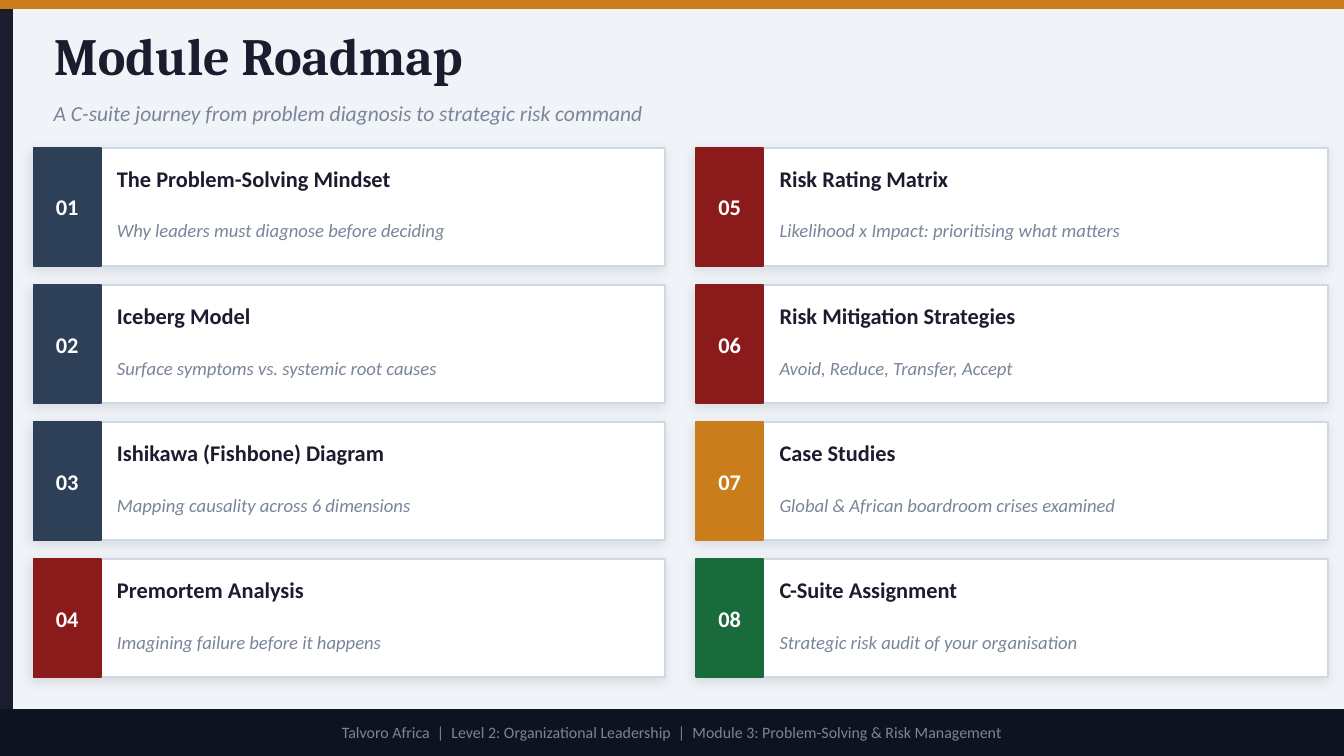
"""Build the module roadmap slide with its eight numbered cards."""
from pptx import Presentation
from pptx.dml.color import RGBColor
from pptx.enum.shapes import MSO_SHAPE
from pptx.enum.text import MSO_ANCHOR, MSO_AUTO_SIZE, PP_ALIGN
from pptx.oxml import parse_xml
from pptx.oxml.ns import nsdecls
from pptx.util import Inches, Pt

COLORS = {
    "background": "F0F4F8",
    "ink": "1C1C2E",
    "muted": "7A8599",
    "white": "FFFFFF",
    "border": "D0D8E4",
    "footer": "0D1321",
    "blue": "2E4057",
    "red": "8B1A1A",
    "amber": "C97D1B",
    "green": "1A6B3C",
}
MODULES = [
    ("The Problem-Solving Mindset", "Why leaders must diagnose before deciding", "blue"),
    ("Iceberg Model", "Surface symptoms vs. systemic root causes", "blue"),
    ("Ishikawa (Fishbone) Diagram", "Mapping causality across 6 dimensions", "blue"),
    ("Premortem Analysis", "Imagining failure before it happens", "red"),
    ("Risk Rating Matrix", "Likelihood x Impact: prioritising what matters", "red"),
    ("Risk Mitigation Strategies", "Avoid, Reduce, Transfer, Accept", "red"),
    ("Case Studies", "Global & African boardroom crises examined", "amber"),
    ("C-Suite Assignment", "Strategic risk audit of your organisation", "green"),
]
SHADOW = (
    f'<a:effectLst {nsdecls("a")}>'
    '<a:outerShdw blurRad="76200" dist="25400" dir="8100000" algn="bl" rotWithShape="0">'
    '<a:srgbClr val="000000"><a:alpha val="10000"/></a:srgbClr>'
    '</a:outerShdw></a:effectLst>'
)
ROWS = 4
CARD_WIDTH, CARD_HEIGHT = 4.7, 0.88
COLUMN_STEP, ROW_STEP = 4.93, 1.02

presentation = Presentation()
presentation.slide_width = Inches(10)
presentation.slide_height = Inches(10 * 9 / 16)
slide = presentation.slides.add_slide(presentation.slide_layouts[5])
slide.background.fill.solid()
slide.background.fill.fore_color.rgb = RGBColor.from_string(COLORS["background"])


def add_bar(left, top, width, height, color, border=None):
    shape = slide.shapes.add_shape(
        MSO_SHAPE.RECTANGLE, Inches(left), Inches(top), Inches(width), Inches(height)
    )
    shape.shadow.inherit = False
    shape.fill.solid()
    shape.fill.fore_color.rgb = RGBColor.from_string(COLORS[color])
    shape.line.color.rgb = RGBColor.from_string(COLORS[border or color])
    shape.line.width = Pt(1)
    return shape


def write_text(text, shape=None, box=None, size=12, color="ink", font="Calibri",
               bold=False, italic=False, align=PP_ALIGN.LEFT):
    if shape is None:
        shape = slide.shapes.add_textbox(*[Inches(length) for length in box])
    frame = shape.text_frame
    frame.text = text
    frame.word_wrap = True
    frame.auto_size = MSO_AUTO_SIZE.NONE
    frame.vertical_anchor = MSO_ANCHOR.MIDDLE
    frame.margin_left = frame.margin_right = frame.margin_top = frame.margin_bottom = 0
    paragraph = frame.paragraphs[0]
    paragraph.alignment = align
    run_font = paragraph.runs[0].font
    run_font.name, run_font.size = font, Pt(size)
    run_font.bold, run_font.italic = bold, italic
    run_font.color.rgb = RGBColor.from_string(COLORS[color])


add_bar(0, 0, 0.09, 5.28, "ink")
add_bar(0, 0, 10, 0.06, "amber")

title = slide.shapes.title
title.left, title.top = Inches(0.4), Inches(0.15)
title.width, title.height = Inches(9), Inches(0.52)
write_text("Module Roadmap", shape=title, size=28, font="Cambria", bold=True)
write_text("A C-suite journey from problem diagnosis to strategic risk command",
           box=(0.4, 0.7, 9, 0.28), size=11.5, color="muted", italic=True)

for index, (name, summary, color) in enumerate(MODULES):
    column, row = divmod(index, ROWS)
    left = 0.25 + column * COLUMN_STEP
    top = 1.1 + row * ROW_STEP
    card = add_bar(left, top, CARD_WIDTH, CARD_HEIGHT, "white", border="border")
    properties = card.element.spPr
    properties.replace(properties.find("{*}effectLst"), parse_xml(SHADOW))
    badge = add_bar(left, top, 0.5, CARD_HEIGHT, color)
    write_text(f"{index + 1:02d}", shape=badge, color="white", bold=True,
               align=PP_ALIGN.CENTER)
    write_text(name, box=(left + 0.62, top + 0.06, 3.98, 0.34), bold=True)
    write_text(summary, box=(left + 0.62, top + 0.44, 3.98, 0.35), size=10,
               color="muted", italic=True)

footer = add_bar(0, 5.28, 10, 0.34, "footer")
write_text("Talvoro Africa  |  Level 2: Organizational Leadership  |  "
           "Module 3: Problem-Solving & Risk Management",
           shape=footer, size=8.5, color="muted", align=PP_ALIGN.CENTER)

presentation.save("out.pptx")
